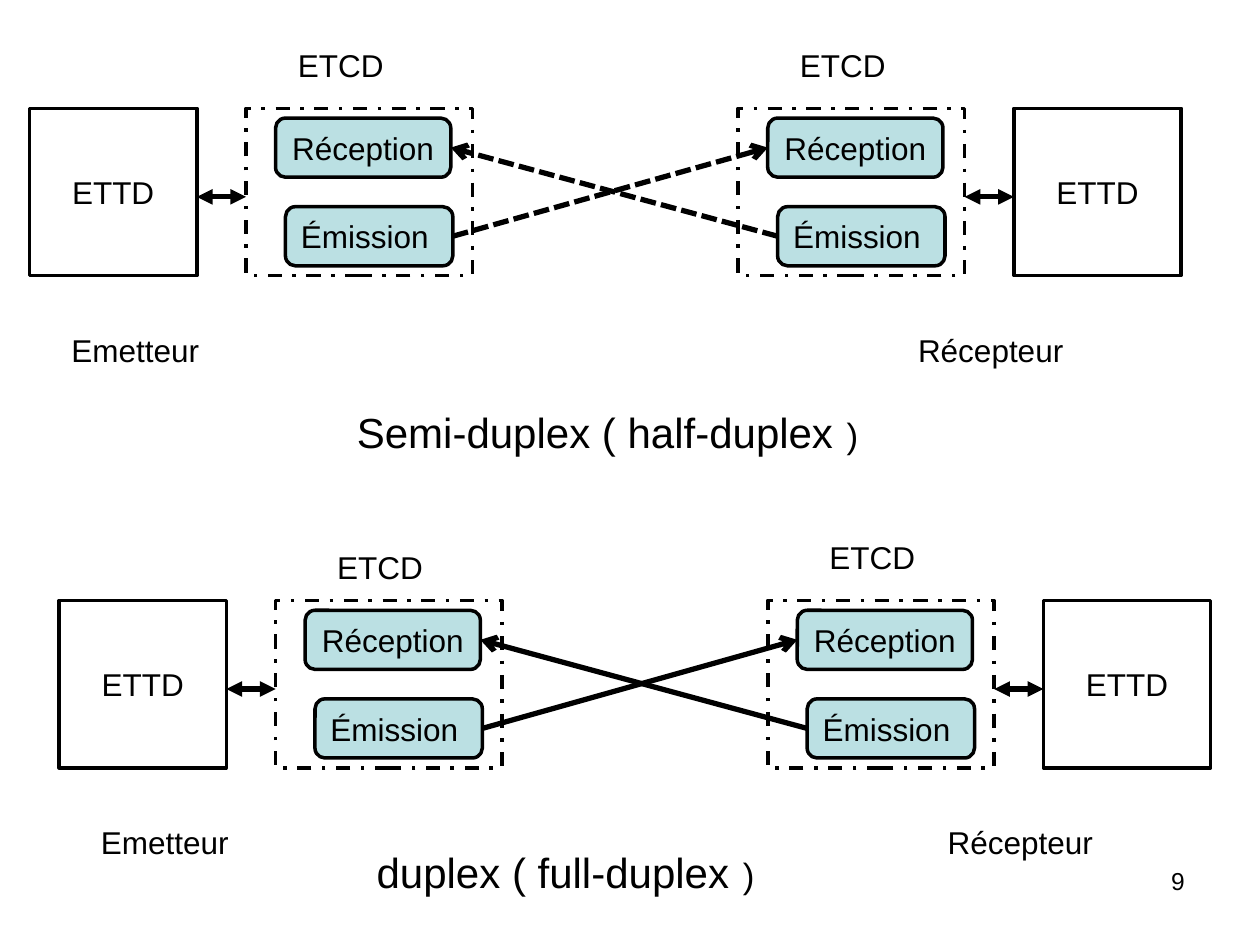
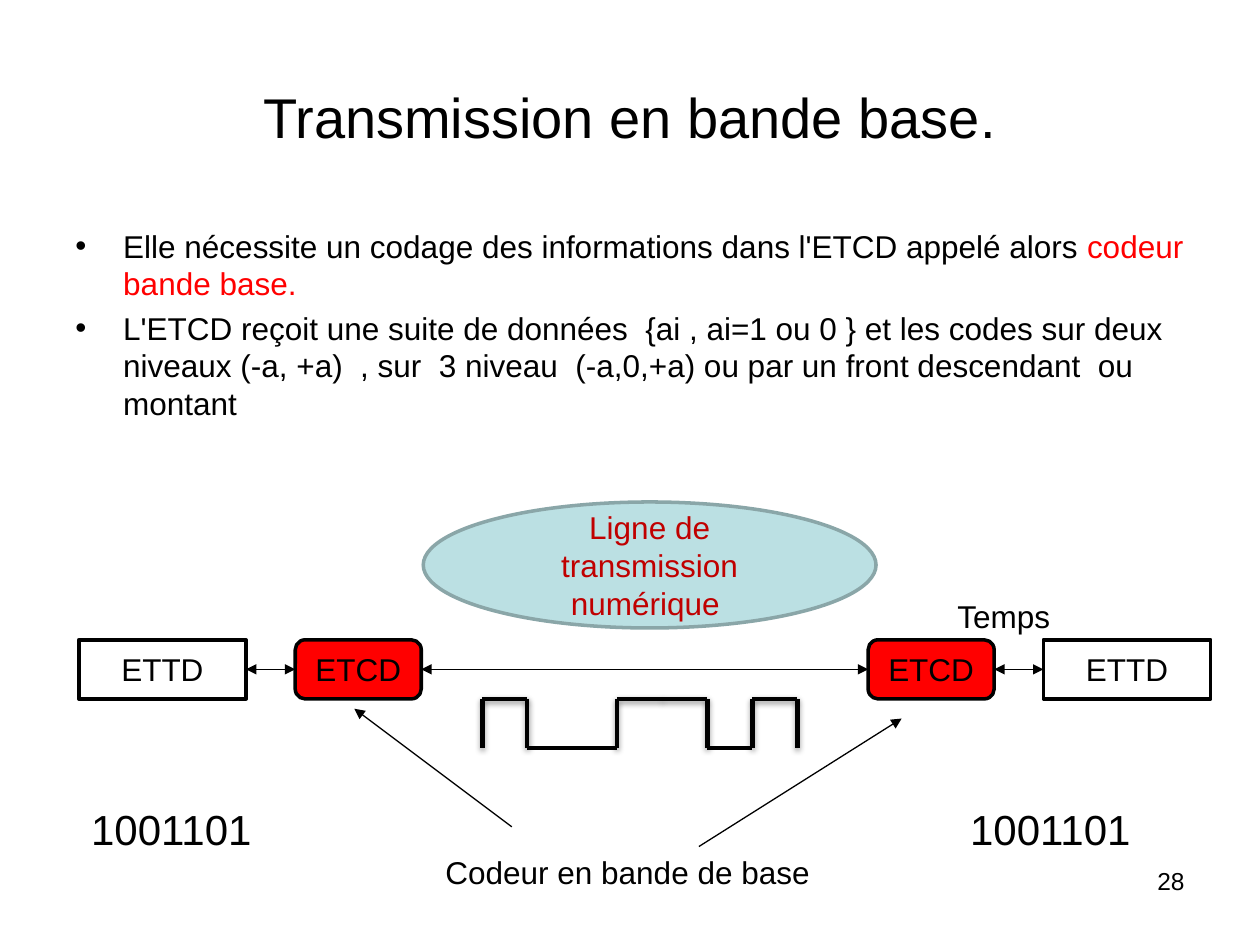
from dataclasses import dataclass
from typing import Any, Optional

import lxml.etree
import pptx
import pptx.dml.color
import pptx.enum.dml
import pptx.enum.shapes
import pptx.enum.text
import pptx.oxml.ns
import pptx.util

# Shared look: a grid of 128 columns by 96 rows, one font, a few colours
WIDE, HIGH = pptx.util.Inches(10), pptx.util.Inches(7.5)
COLS, ROWS = 128, 96
FONT = "Arial"
INK = {"black": "000000", "aqua": "BBE0E3", "slate": "8AA6A8",
       "red": "FF0000", "brick": "C00000"}
KIND = pptx.enum.shapes.MSO_SHAPE
DASH = pptx.enum.dml.MSO_LINE
SIDE = pptx.enum.text.PP_ALIGN
LEFT, RIGHT = 1, 3  # connection sites
BOTH = {"headEnd": "triangle", "tailEnd": "triangle"}
TIP = {"tailEnd": "triangle"}
OPEN = {"tailEnd": "arrow"}


@dataclass(frozen=True)
class Box:
    x: float
    y: float
    w: float
    h: float

    def place(self) -> list[int]:
        return [across(self.x), down(self.y), across(self.w), down(self.h)]


@dataclass(frozen=True)
class Panel:
    x: float
    y: float
    dash: Optional[Any]
    tags: tuple[tuple[float, float], ...]
    title: str
    spot: Box


PANELS = (
    Panel(3, 11, DASH.SQUARE_DOT, ((29, 4), (80, 4)),
          "Semi-duplex ( half-duplex", Box(35, 40, 54, 7.3)),
    Panel(6, 61, None, ((33, 55), (83, 54)),
          "duplex ( full-duplex", Box(37, 84.6, 41.3, 7.3)),
)


def across(col: float) -> int:
    return round(WIDE * col / COLS)


def down(row: float) -> int:
    return round(HIGH * row / ROWS)


def tint(name: str) -> pptx.dml.color.RGBColor:
    return pptx.dml.color.RGBColor.from_string(INK[name])


def sub(root: Any, tag: str, **attrs: str) -> Any:
    return lxml.etree.SubElement(root, pptx.oxml.ns.qn("a:" + tag), attrs)


# Text
def style(run: Any, size: float, ink: str = "black") -> None:
    run.font.name = FONT
    run.font.size = pptx.util.Pt(size)
    run.font.color.rgb = tint(ink)


def write(frame: Any, text: str, size: float, ink: str = "black",
          side: Any = SIDE.LEFT) -> None:
    frame.text = text
    for para in frame.paragraphs:
        para.alignment = side
        for run in para.runs:
            style(run, size, ink)


def extend(para: Any, text: str, size: float, ink: str = "black") -> None:
    run = para.add_run()
    run.text = text
    style(run, size, ink)


def label(shapes: Any, box: Box, text: str, size: float = 18,
          wrap: bool = False, side: Any = SIDE.LEFT) -> Any:
    frame = shapes.add_textbox(*box.place()).text_frame
    frame.word_wrap = wrap
    if not wrap:
        frame.auto_size = pptx.enum.text.MSO_AUTO_SIZE.SHAPE_TO_FIT_TEXT
    write(frame, text, size, side=side)
    return frame


def number(slide: Any, text: str) -> None:
    label(slide.shapes, Box(91.8, 87.4, 29.8, 6.7), text, 14, True, SIDE.RIGHT)


# Shapes and lines
def block(shapes: Any, kind: Any, box: Box, text: str = "",
          fill: Optional[str] = None, edge: str = "black",
          ink: str = "black", dash: Any = None) -> Any:
    shape = shapes.add_shape(kind, *box.place())
    shape.shadow.inherit = False
    if fill:
        shape.fill.solid()
        shape.fill.fore_color.rgb = tint(fill)
    else:
        shape.fill.background()
    shape.line.color.rgb = tint(edge)
    shape.line.width = pptx.util.Pt(2)
    if dash:
        shape.line.dash_style = dash
    if text:
        shape.text_frame.vertical_anchor = pptx.enum.text.MSO_ANCHOR.MIDDLE
        write(shape.text_frame, text, 18, ink, SIDE.CENTER)
    return shape


def stroke(shapes: Any, start: tuple[float, float], stop: tuple[float, float],
           width: float, ends: Optional[dict[str, str]] = None,
           dash: Any = None, shade: bool = False) -> Any:
    line = shapes.add_connector(
        pptx.enum.shapes.MSO_CONNECTOR.STRAIGHT,
        across(start[0]), down(start[1]), across(stop[0]), down(stop[1]))
    line.line.color.rgb = tint("black")
    line.line.width = pptx.util.Pt(width)
    if dash:
        line.line.dash_style = dash
    for tag, head in (ends or {}).items():
        sub(line.line._get_or_add_ln(), tag, type=head)
    glow = sub(line._element.spPr, "effectLst")
    if shade:
        cast = sub(glow, "outerShdw", blurRad="40000", dist="20000",
                   dir="5400000", rotWithShape="0")
        sub(sub(cast, "srgbClr", val=INK["black"]), "alpha", val="38000")
    return line


def join(shapes: Any, first: Any, last: Any, sites: tuple[int, int],
         width: float, ends: dict[str, str], dash: Any = None) -> None:
    line = stroke(shapes, (0, 0), (1, 1), width, ends, dash)
    line.begin_connect(first, sites[0])
    line.end_connect(last, sites[1])


# Slide 1: two panels, each with two stations and crossed channels
def modem(shapes: Any, x: float, y: float) -> tuple[Any, Any]:
    send = block(shapes, KIND.ROUNDED_RECTANGLE, Box(x + 4, y + 10, 17, 6),
                 "Émission ", "aqua")
    take = block(shapes, KIND.ROUNDED_RECTANGLE, Box(x + 3, y + 1, 17.8, 6),
                 "Réception ", "aqua")
    block(shapes, KIND.RECTANGLE, Box(x, y, 23, 17), dash=DASH.DASH_DOT)
    return send, take


def draw_panel(slide: Any, panel: Panel) -> None:
    shapes = slide.shapes.add_group_shape().shapes
    x, y = panel.x, panel.y
    for shift in (0, 100):
        block(shapes, KIND.RECTANGLE, Box(x + shift, y, 17, 17), "ETTD")
    for shift in (17, 95):
        stroke(shapes, (x + shift, y + 9), (x + shift + 5, y + 9), 3, BOTH)
    near_send, near_take = modem(shapes, x + 22, y)
    far_send, far_take = modem(shapes, x + 72, y)
    join(shapes, near_send, far_take, (RIGHT, LEFT), 3, OPEN, panel.dash)
    join(shapes, far_send, near_take, (LEFT, RIGHT), 3, OPEN, panel.dash)
    label(shapes, Box(x + 3, y + 22, 31, 5.1), "Emetteur", wrap=True)
    label(shapes, Box(x + 89, y + 22, 18.4, 5.1), "Récepteur")

    for left, top in panel.tags:
        label(slide.shapes, Box(left, top, 11.4, 5.1), "ETCD")
    para = label(slide.shapes, panel.spot, panel.title, 24).paragraphs[0]
    extend(para, " ", 28)
    extend(para, ")", 20)


def draw_duplex(slide: Any) -> None:
    for panel in PANELS:
        draw_panel(slide, panel)
    number(slide, "9")


# Slide 2: text, transmission chain and coded signal
BITS = "1001101"
POINTS = (
    "Elle nécessite un codage des informations dans l'ETCD appelé alors ",
    "L'ETCD reçoit une suite de données  {ai , ai=1 ou 0 } et les codes sur "
    "deux niveaux (-a, +a)  , sur  3 niveau  (-a,0,+a) ou par un front "
    "descendant  ou montant",
)


def draw_points(shapes: Any) -> None:
    frame = label(shapes, Box(6.4, 22.4, 116.6, 20.6), "\n".join(POINTS),
                  wrap=True)
    extend(frame.paragraphs[0], "codeur bande base.", 18, "red")
    dent = pptx.util.Inches(0.38)
    for para in frame.paragraphs:
        para.space_before = pptx.util.Pt(3.6)
        props = para._p.get_or_add_pPr()
        props.set("marL", str(dent))
        props.set("indent", str(-dent))
        sub(props, "buFont", typeface=FONT)
        sub(props, "buChar", char="•")


def draw_chain(shapes: Any) -> None:
    chain = []
    for x, width, name in ((8, 17, "ETTD"), (30, 12.8, "ETCD"),
                           (88.2, 12.8, "ETCD"), (106, 17, "ETTD")):
        coder = name == "ETCD"
        kind = KIND.ROUNDED_RECTANGLE if coder else KIND.RECTANGLE
        chain.append(block(shapes, kind, Box(x, 65, width, 6), name,
                           "red" if coder else None))
    for first, last in zip(chain, chain[1:]):
        join(shapes, first, last, (RIGHT, LEFT), 0.75, BOTH)


def draw_signal(slide: Any) -> None:
    shapes = slide.shapes.add_group_shape().shapes
    start, step, high, low = 49, 32 / len(BITS), 71, 76
    last = "0"
    for i, bit in enumerate(BITS + "0"):
        x = start + i * step
        if bit != last:
            stroke(shapes, (x, high), (x, low), 2.5, shade=True)
        if i < len(BITS):
            y = high if bit == "1" else low
            stroke(shapes, (x, y), (x + step, y), 2.5, shade=bit == "1")
        last = bit


def draw_base(slide: Any) -> None:
    shapes = slide.shapes
    title = label(shapes, Box(6.4, 3.8, 115.2, 16),
                  "Transmission en bande base.", 32, True, SIDE.CENTER)
    title.vertical_anchor = pptx.enum.text.MSO_ANCHOR.MIDDLE
    draw_points(shapes)
    draw_chain(shapes)
    block(shapes, KIND.OVAL, Box(43, 51, 46, 12.8),
          "Ligne de transmission numérique ", "aqua", "slate", "brick")
    label(shapes, Box(44, 86, 40.8, 5.1), "Codeur en bande de base")
    stroke(shapes, (71, 86), (91.6, 73), 0.75, TIP)
    stroke(shapes, (52, 84), (36, 72), 0.75, TIP)
    for x in (8, 97.3):
        label(shapes, Box(x, 81, 19.1, 6.5), BITS, 24)
    label(shapes, Box(96, 60, 13.1, 5.1), "Temps")
    draw_signal(slide)
    number(slide, "28")


def main() -> None:
    deck = pptx.Presentation()
    deck.slide_width, deck.slide_height = WIDE, HIGH
    for draw in (draw_duplex, draw_base):
        draw(deck.slides.add_slide(deck.slide_layouts[6]))
    deck.save("out.pptx")


if __name__ == "__main__":
    main()
